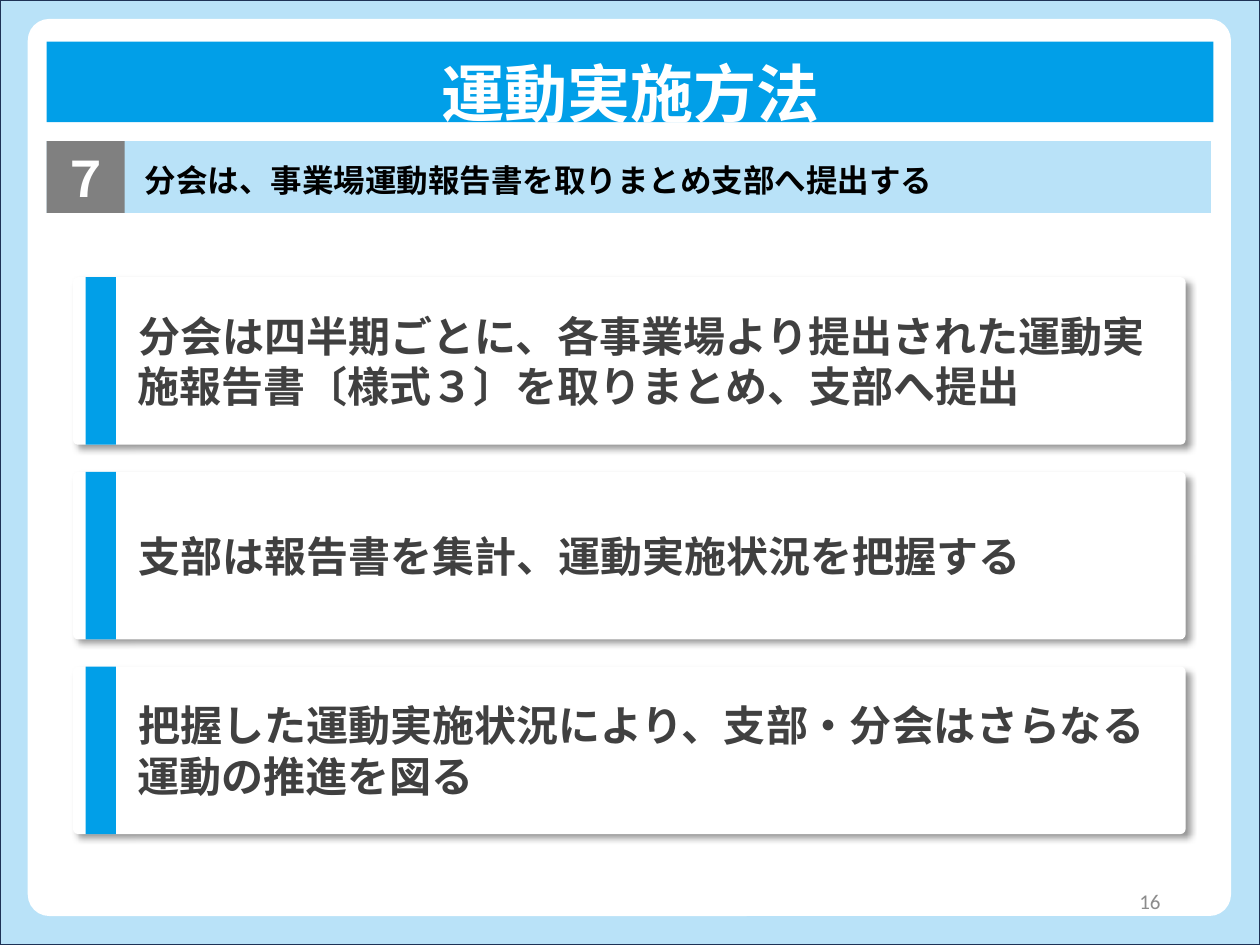
"""Build the slide on how the campaign reports are gathered and submitted."""
from dataclasses import dataclass

from lxml import etree
from pptx import Presentation
from pptx.dml.color import RGBColor
from pptx.enum import shapes as kinds, text as txt
from pptx.oxml.ns import qn
from pptx.util import Pt

COLORS = {
    "sky": "B9E2F8", "navy": "1E3256", "white": "FFFFFF", "blue": "019FE8",
    "gray": "808080", "black": "000000", "body": "404040", "number": "8C8C8C",
}
RECT = kinds.MSO_SHAPE.RECTANGLE
ROUND = kinds.MSO_SHAPE.ROUNDED_RECTANGLE
ALIGN = txt.PP_ALIGN
ANCHOR = txt.MSO_ANCHOR
GROW = txt.MSO_AUTO_SIZE.SHAPE_TO_FIT_TEXT
CARD_TOP, CARD_PITCH, CARD_HEIGHT = 158.4, 111.24, 95.76


@dataclass(frozen=True)
class Box:
    """Position and size in points."""
    left: float
    top: float
    width: float
    height: float

    def lengths(self) -> list:
        """Return the four lengths as Pt values."""
        return [Pt(v) for v in (self.left, self.top, self.width, self.height)]


@dataclass(frozen=True)
class Style:
    """Look of one paragraph."""
    size: float
    face: str
    color: str
    bold: bool = True
    align: ALIGN = ALIGN.LEFT
    anchor: ANCHOR = ANCHOR.TOP


def rgb(name: str) -> RGBColor:
    """Look up a named colour."""
    return RGBColor.from_string(COLORS[name])


def add_panel(slide, box: Box, fill: str, kind=RECT, radius: float = 0):
    """Add a filled shape without outline or shadow."""
    panel = slide.shapes.add_shape(kind, *box.lengths())
    if kind == ROUND:
        panel.adjustments[0] = radius
    panel.fill.solid()
    panel.fill.fore_color.rgb = rgb(fill)
    panel.line.fill.background()
    panel.shadow.inherit = False
    return panel


def write(shape, words: str, style: Style, grow: bool = False) -> None:
    """Put one formatted paragraph into a shape."""
    frame = shape.text_frame
    formats = {"word_wrap": True, "vertical_anchor": style.anchor,
               "auto_size": GROW if grow else txt.MSO_AUTO_SIZE.NONE}
    for key, value in formats.items():
        setattr(frame, key, value)
    paragraph = frame.paragraphs[0]
    paragraph.alignment = style.align
    run = paragraph.add_run()
    run.text = words
    for key, value in {"size": Pt(style.size), "name": style.face, "bold": style.bold}.items():
        setattr(run.font, key, value)
    run.font.color.rgb = rgb(style.color)
    etree.SubElement(run.font._element, qn("a:ea"), typeface=style.face)


def add_label(slide, box: Box, words: str, style: Style, grow: bool = True) -> None:
    """Add a text box."""
    write(slide.shapes.add_textbox(*box.lengths()), words, style, grow)


def add_shadow(panel) -> None:
    """Give a panel a soft shadow to the lower right."""
    effects = panel._element.spPr.find(qn("a:effectLst"))
    shadow = etree.SubElement(effects, qn("a:outerShdw"), blurRad=str(Pt(4)), dist=str(Pt(3)),
                              dir="2700000", algn="tl", rotWithShape="0")
    tint = etree.SubElement(shadow, qn("a:srgbClr"), val=COLORS["black"])
    etree.SubElement(tint, qn("a:alpha"), val="40000")


def add_card(slide, top: float, words: str) -> None:
    """Add a shadowed card with a blue bar at its left."""
    card = add_panel(slide, Box(41.76, top, 635.76, CARD_HEIGHT), "white", ROUND, 0.03)
    add_shadow(card)
    indents = card.text_frame.paragraphs[0]._p.get_or_add_pPr()
    indents.set("marL", str(Pt(28.8)))
    indents.set("indent", str(Pt(0.72)))
    tabs = etree.SubElement(indents, qn("a:tabLst"))
    etree.SubElement(tabs, qn("a:tab"), pos=str(Pt(42.5)), algn="l")
    write(card, words, Style(24, "Arial", "body", anchor=ANCHOR.MIDDLE))
    add_panel(slide, Box(48.96, top, 17.28, CARD_HEIGHT), "blue")


def add_title(slide, box: Box, words: str) -> None:
    """Format the title placeholder and bring it in front of the banner."""
    title = slide.shapes.title
    for key, value in zip(("left", "top", "width", "height"), box.lengths()):
        setattr(title, key, value)
    write(title, words, Style(36, "Noto Sans CJK JP", "white", align=ALIGN.CENTER), True)
    slide.shapes._spTree.append(title._element)


def main() -> None:
    """Build and save the slide."""
    deck = Presentation()
    deck.slide_width, deck.slide_height = Pt(720), Pt(540)
    slide = deck.slides.add_slide(deck.slide_layouts[5])

    backdrop = add_panel(slide, Box(0, 0, 720, 540), "sky")
    backdrop.line.color.rgb = rgb("navy")
    backdrop.line.width = Pt(1)
    add_panel(slide, Box(15.84, 10.8, 687.6, 512.64), "white", ROUND, 0.024)
    add_panel(slide, Box(26.64, 23.76, 666.72, 46.08), "blue")
    add_title(slide, Box(135.36, 27.36, 449.28, 51.12), "運動実施方法")

    add_panel(slide, Box(26.64, 80.64, 665.28, 41.04), "sky", ROUND)
    add_panel(slide, Box(26.64, 80.64, 44.64, 41.04), "gray")
    add_label(slide, Box(28.08, 81.36, 30.96, 41.04), "７", Style(28, "Calibri", "white"))
    add_label(slide, Box(75.6, 88.56, 617.76, 28.8),
              "分会は、事業場運動報告書を取りまとめ支部へ提出する", Style(18, "Calibri", "black"))

    steps = (
        "分会は四半期ごとに、各事業場より提出された運動実施報告書〔様式３〕を取りまとめ、支部へ提出",
        "支部は報告書を集計、運動実施状況を把握する",
        "把握した運動実施状況により、支部・分会はさらなる運動の推進を図る",
    )
    for row, words in enumerate(steps):
        add_card(slide, CARD_TOP + row * CARD_PITCH, words)

    add_label(slide, Box(508.32, 500.4, 162, 28.8), "16",
              Style(12, "Calibri", "number", False, ALIGN.RIGHT, ANCHOR.MIDDLE), False)
    deck.save("out.pptx")


if __name__ == "__main__":
    main()
